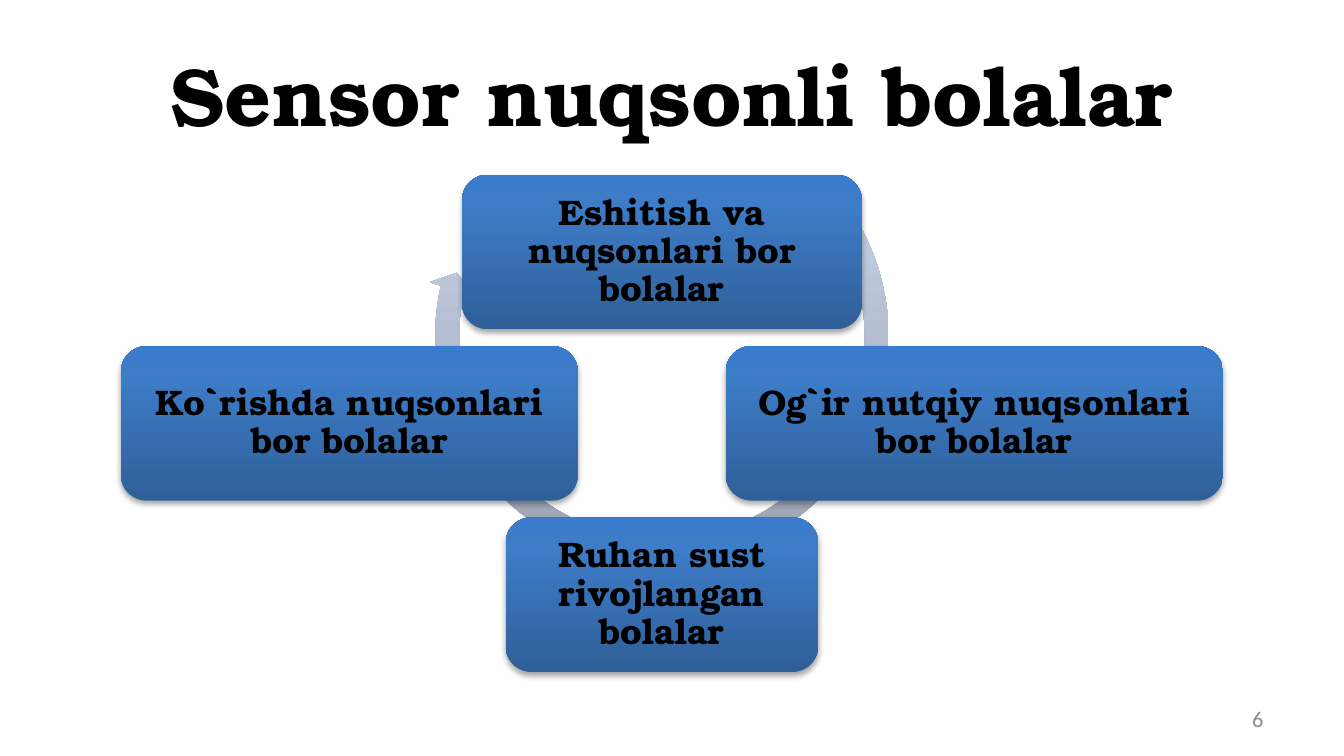
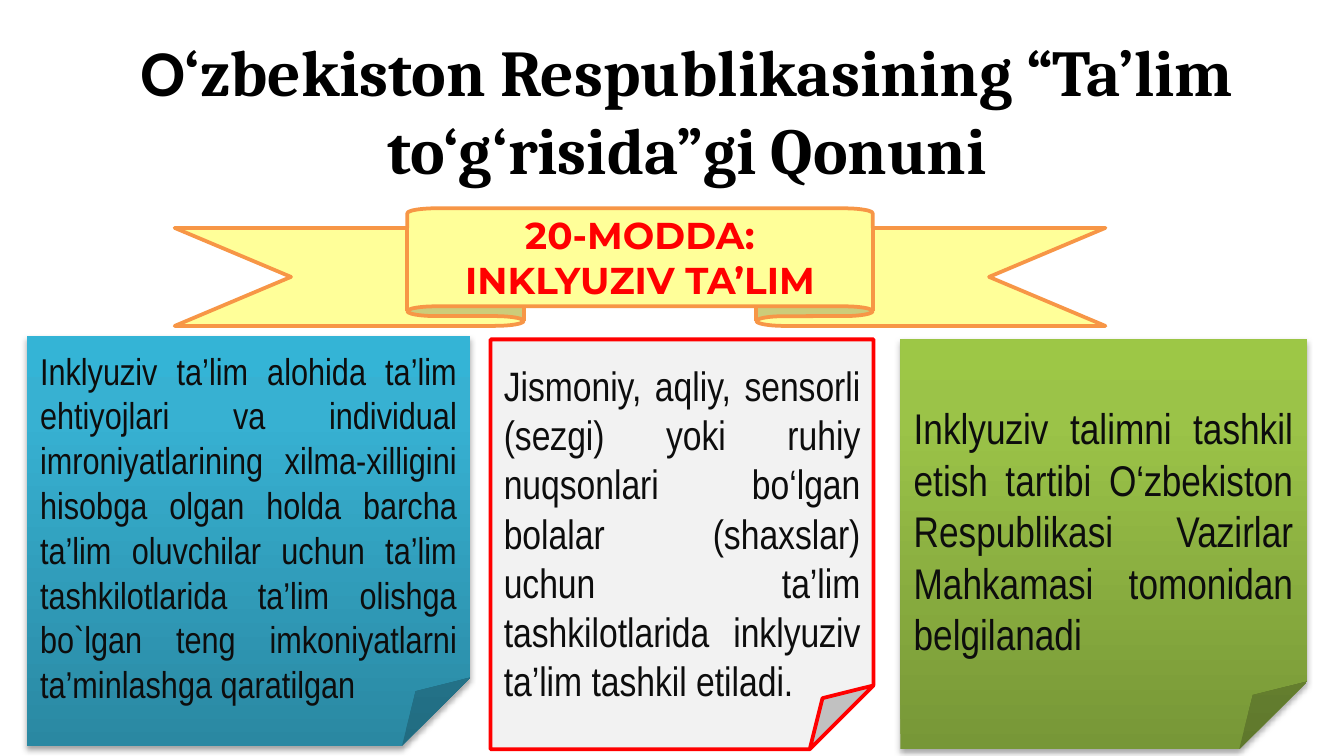
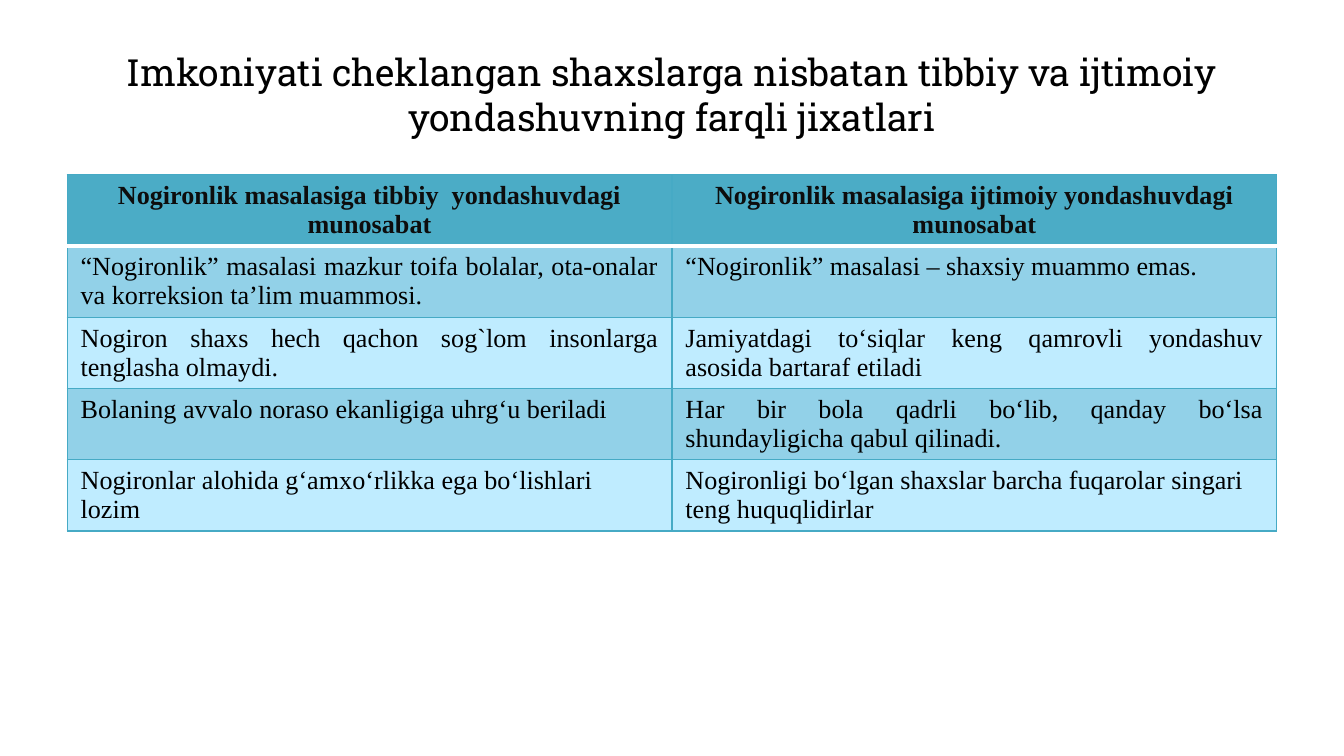
"""Build three slides on children with special needs and inclusive schooling."""
import pptx
import pptx.dml.color
import pptx.enum.shapes
import pptx.enum.text
import pptx.oxml
import pptx.oxml.ns
import pptx.util

Pt = pptx.util.Pt
Kind = pptx.enum.shapes.MSO_SHAPE
Align = pptx.enum.text.PP_ALIGN
Mid = pptx.enum.text.MSO_ANCHOR.MIDDLE
SPACE = pptx.oxml.ns.nsdecls("a")

BLACK, INK, GREY, WHITE = "000000", "0D0D0D", "8C8C8C", "FFFFFF"
RED, PALE, CREAM, PEACH = "FF0000", "F2F2F2", "FFFF99", "F79646"
BLUE = ("2F5F99", "3D7CC7", "3A7CCB")
STEEL = ("99A0AF", "C6D0E4", "C7D1E5")
AQUA = ("2A88A2", "37B1D2", "34B4D6")
GREEN = ("779737", "9BC348", "9DC746")
HEAD, DARK, LIGHT, RULE = "4BACC6", "92D1E8", "BFECFF", "46AAC5"
BOLD = "TeX Gyre Bonum"


def paint(thing, *codes, edge=None, shade=False):
    """Fill a shape, cell or font with one colour or a rising gradient."""
    if len(codes) == 1:
        thing.fill.solid()
        thing.fill.fore_color.rgb = pptx.dml.color.RGBColor.from_string(codes[0])
    else:
        stops = "".join(
            f'<a:gs pos="{pos}"><a:srgbClr val="{code}"/></a:gs>'
            for pos, code in zip((0, 80000, 100000), codes))
        thing._element.spPr.append(pptx.oxml.parse_xml(
            f'<a:gradFill {SPACE} rotWithShape="1"><a:gsLst>{stops}</a:gsLst>'
            '<a:lin ang="16200000" scaled="0"/></a:gradFill>'))
    if hasattr(thing, "shadow"):
        thing.shadow.inherit = False
        if edge:
            paint(thing.line, edge)
            thing.line.width = Pt(2)
        else:
            thing.line.fill.background()
    if shade:
        thing._element.spPr.effectLst.append(pptx.oxml.parse_xml(
            f'<a:outerShdw {SPACE} blurRad="40000" dist="23000" dir="5400000" rotWithShape="0">'
            '<a:srgbClr val="000000"><a:alpha val="35000"/></a:srgbClr></a:outerShdw>'))


def write(frame, text, size=14, font="Calibri", color=BLACK, bold=False,
          align=Align.CENTER, lead=None):
    """Add a run to the first paragraph of a text frame."""
    frame.word_wrap = True
    frame.auto_size = pptx.enum.text.MSO_AUTO_SIZE.NONE
    para = frame.paragraphs[0]
    para.alignment = align
    para.line_spacing = lead
    run = para.add_run()
    run.text = text
    run.font.size, run.font.name, run.font.bold = Pt(size), font, bold
    paint(run.font, color)


deck = pptx.Presentation()
deck.slide_width = pptx.util.Inches(10)
deck.slide_height = deck.slide_width * 9 // 16
cell = deck.slide_width // 400

heads = [
    ((20, 9, 360, 38), 44, True, [("Sensor nuqsonli bolalar", BOLD)]),
    ((20, 6, 369, 53), 35, True, [
        ("O", "Calibri"),
        ("‘zbekiston Respublikasining “Ta’lim to‘g‘risida”gi Qonuni", "Cambria")]),
    ((20, 9, 360, 38), 20, False, [
        ("Imkoniyati cheklangan shaxslarga nisbatan tibbiy va ijtimoiy "
         "yondashuvning farqli jixatlari", "Roboto Slab")]),
]
for place, size, bold, parts in heads:
    slide = deck.slides.add_slide(deck.slide_layouts[5])
    title = slide.shapes.title
    title.left, title.top, title.width, title.height = [n * cell for n in place]
    title.text_frame.vertical_anchor = Mid
    for text, font in parts:
        write(title.text_frame, text, size=size, font=font, bold=bold)
ring, law, views = [slide.shapes for slide in deck.slides]

arrow = ring.add_shape(Kind.CIRCULAR_ARROW, 126 * cell, 29 * cell, 142 * cell, 142 * cell)
for spot, value in enumerate((0.05, 2.73, 115.55, 189.83, 0.05)):
    arrow.adjustments[spot] = value
paint(arrow, *STEEL)

groups = [
    (197, 0, 119, "Eshitish va nuqsonlari bor bolalar"),
    (290, 1, 148, "Og`ir nutqiy nuqsonlari bor bolalar"),
    (197, 2, 93, "Ruhan sust rivojlangan bolalar"),
    (104, 1, 136, "Ko`rishda nuqsonlari bor bolalar"),
]
for mid, row, wide, text in groups:
    box = ring.add_shape(Kind.ROUNDED_RECTANGLE, (2 * mid - wide) * cell // 2,
                         (52 + 51 * row) * cell, wide * cell, 46 * cell)
    paint(box, *BLUE, shade=True)
    frame = box.text_frame
    frame.margin_left = frame.margin_right = 3 * cell
    frame.margin_top = frame.margin_bottom = 3 * cell
    frame.vertical_anchor = Mid
    write(frame, text, size=19, font=BOLD, bold=True, lead=0.9)

page = ring.add_textbox(287 * cell, 208 * cell, 93 * cell, 12 * cell).text_frame
page.vertical_anchor = Mid
write(page, "6", size=12, color=GREY, align=Align.RIGHT)

band = law.add_shape(Kind.UP_RIBBON, 52 * cell, 62 * cell, 277 * cell, 35 * cell)
paint(band, CREAM, edge=PEACH)
band.text_frame.vertical_anchor = Mid
write(band.text_frame, "20-MODDA: INKLYUZIV TA’LIM", size=20, font="Montserrat",
      color=RED, bold=True)

notes = [
    (8, 100, 132, 20, AQUA, None,
     "Inklyuziv ta’lim alohida ta’lim ehtiyojlari va individual imroniyatlarining "
     "xilma-xilligini hisobga olgan holda barcha ta’lim oluvchilar uchun ta’lim "
     "tashkilotlarida ta’lim olishga bo`lgan teng imkoniyatlarni ta’minlashga qaratilgan"),
    (146, 101, 114, 22, (PALE,), RED,
     "Jismoniy, aqliy, sensorli (sezgi) yoki ruhiy nuqsonlari bo‘lgan bolalar "
     "(shaxslar) uchun ta’lim tashkilotlarida inklyuziv ta’lim tashkil etiladi."),
    (268, 101, 121, 23, GREEN, None,
     "Inklyuziv talimni tashkil etish tartibi O‘zbekiston Respublikasi Vazirlar "
     "Mahkamasi tomonidan belgilanadi"),
]
for left, top, wide, size, fill, edge, text in notes:
    note = law.add_shape(Kind.FOLDED_CORNER, left * cell, top * cell, wide * cell, 122 * cell)
    paint(note, *fill, edge=edge, shade=edge is None)
    note.text_frame.margin_top = 14 * cell
    note.text_frame.vertical_anchor = Mid
    write(note.text_frame, text, size=size, font="Arial Narrow", color=INK,
          align=Align.JUSTIFY)

rows = [
    ("Nogironlik masalasiga tibbiy  yondashuvdagi munosabat",
     "Nogironlik masalasiga ijtimoiy yondashuvdagi munosabat"),
    ("“Nogironlik” masalasi mazkur toifa bolalar, ota-onalar va korreksion ta’lim muammosi.",
     "“Nogironlik” masalasi – shaxsiy muammo emas."),
    ("Nogiron shaxs hech qachon sog`lom insonlarga tenglasha olmaydi.",
     "Jamiyatdagi to‘siqlar keng qamrovli yondashuv asosida bartaraf etiladi"),
    ("Bolaning avvalo noraso ekanligiga uhrg‘u beriladi",
     "Har bir bola qadrli bo‘lib, qanday bo‘lsa shundayligicha qabul qilinadi."),
    ("Nogironlar alohida g‘amxo‘rlikka ega bo‘lishlari lozim",
     "Nogironligi bo‘lgan shaxslar barcha fuqarolar singari teng huquqlidirlar"),
]
fills = (HEAD, DARK, LIGHT, DARK, LIGHT)
sides = (Align.CENTER, Align.JUSTIFY, Align.JUSTIFY, Align.JUSTIFY, Align.LEFT)
grid = views.add_table(5, 2, 20 * cell, 52 * cell, 360 * cell, 105 * cell).table
for r, (texts, fill, side) in enumerate(zip(rows, fills, sides)):
    grid.rows[r].height = 21 * cell
    for c, text in enumerate(texts):
        box = grid.cell(r, c)
        paint(box, fill)
        write(box.text_frame, text, font="Times New Roman", color=BLACK if r else INK,
              bold=r == 0, align=side)
        for spot, edge in enumerate("LRTB"):
            white = (r, edge) in ((0, "B"), (1, "T"))
            box._tc.tcPr.insert(spot, pptx.oxml.parse_xml(
                f'<a:ln{edge} {SPACE} w="{Pt(2) if white else Pt(0.75)}"><a:solidFill>'
                f'<a:srgbClr val="{WHITE if white else RULE}"/></a:solidFill></a:ln{edge}>'))

deck.save("out.pptx")
